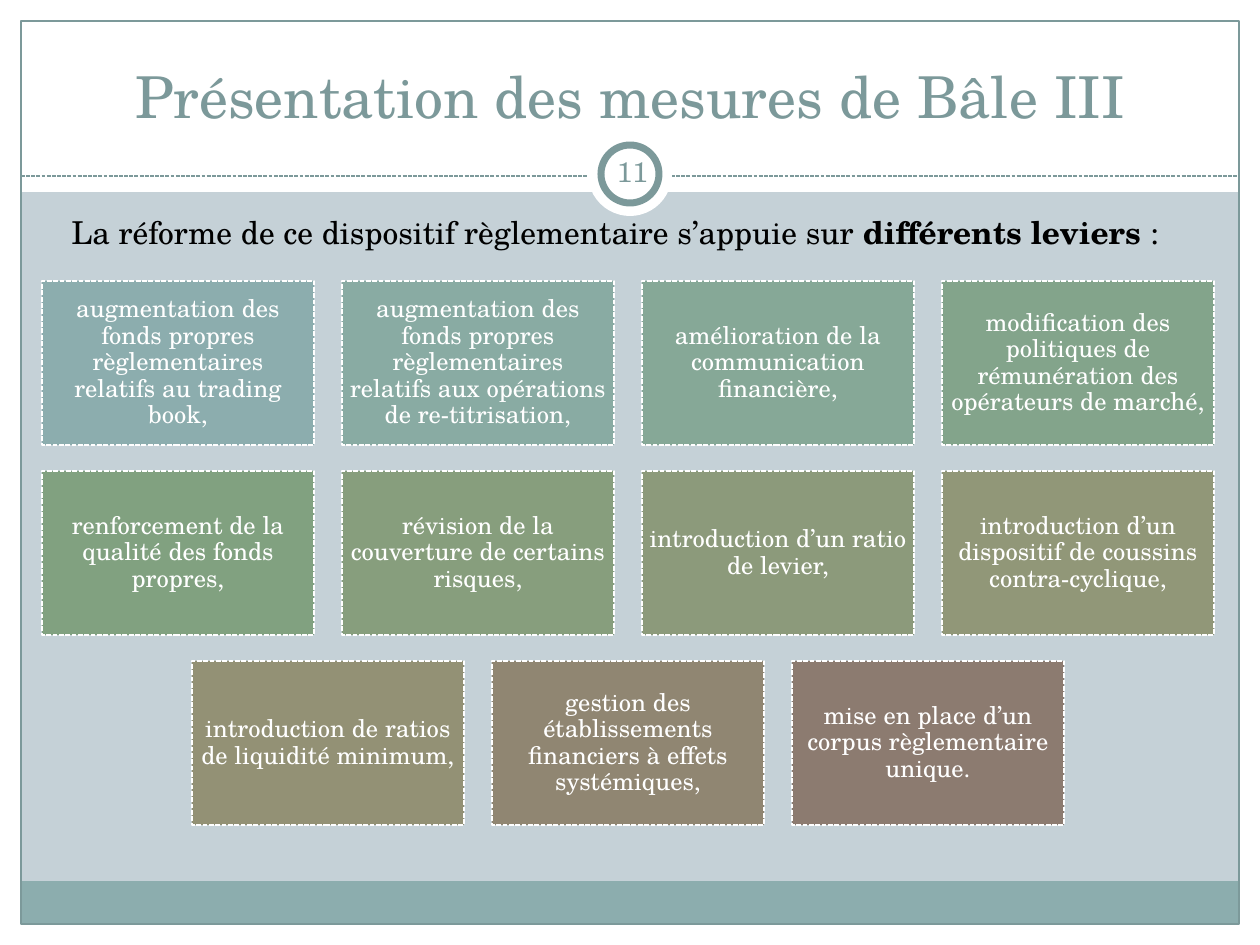
from pptx import Presentation
from pptx.dml.color import RGBColor
from pptx.enum.dml import MSO_LINE
from pptx.enum.shapes import MSO_CONNECTOR, MSO_SHAPE
from pptx.enum.text import MSO_ANCHOR, PP_ALIGN
from pptx.oxml.ns import qn
from pptx.util import Pt
from lxml import etree

RECT, OVAL = MSO_SHAPE.RECTANGLE, MSO_SHAPE.OVAL
STRAIGHT = MSO_CONNECTOR.STRAIGHT
DASH = MSO_LINE.SQUARE_DOT
LEFT, CENTER = PP_ALIGN.LEFT, PP_ALIGN.CENTER
TOP, MIDDLE, BOTTOM = MSO_ANCHOR.TOP, MSO_ANCHOR.MIDDLE, MSO_ANCHOR.BOTTOM

PX_PER_INCH = 126
EMU_PER_PX = 914400 / PX_PER_INCH
SLIDE_W, SLIDE_H = 1260, 945
FONT = "TeX Gyre Schola"
COLORS = {
    "background": "C5D1D7",
    "white": "FFFFFF",
    "black": "000000",
    "accent": "7C999A",
    "footer": "8CADAE",
}

CARD_W, CARD_H = 272, 164
COLUMN_STEP, ROW_STEP = 300, 190
GRID_LEFT, GRID_TOP, COLUMNS = 42, 281, 4
LEVERS = [
    ("augmentation des fonds propres règlementaires relatifs au trading book,", "8CADAE"),
    ("augmentation des fonds propres règlementaires relatifs aux opérations "
     "de re-titrisation,", "89ABA3"),
    ("amélioration de la communication financière,", "86A897"),
    ("modification des politiques de rémunération des opérateurs de marché,", "83A48B"),
    ("renforcement de la qualité des fonds propres,", "81A180"),
    ("révision de la couverture de certains risques,", "879E7D"),
    ("introduction d’un ratio de levier,", "8C9A7B"),
    ("introduction d’un dispositif de coussins contra-cyclique,", "919778"),
    ("introduction de ratios de liquidité minimum,", "939175"),
    ("gestion des établissements financiers à effets systémiques,", "908672"),
    ("mise en place d’un corpus règlementaire unique.", "8C7B70"),
]


def px(length):
    return round(length * EMU_PER_PX)


def rgb(color):
    return RGBColor.from_string(COLORS.get(color, color))


class SlideBuilder:
    """Holds the style and the slide being drawn."""

    def __init__(self, slide):
        self.slide = slide
        self.shapes = slide.shapes

    def background(self, color):
        fill = self.slide.background.fill
        fill.solid()
        fill.fore_color.rgb = rgb(color)

    def shape(self, kind, box, fill=None, line=None, width=0.75, dash=None):
        shape = self.shapes.add_shape(kind, *map(px, box))
        shape.shadow.inherit = False
        if fill:
            shape.fill.solid()
            shape.fill.fore_color.rgb = rgb(fill)
        else:
            shape.fill.background()
        if line:
            self.stroke(shape.line, line, width, dash)
        else:
            shape.line.fill.background()
        return shape

    def stroke(self, line, color, width, dash=None):
        line.color.rgb = rgb(color)
        line.width = Pt(width)
        if dash:
            line.dash_style = dash

    def dashed_rule(self, left, right, y):
        rule = self.shapes.add_connector(STRAIGHT, px(left), px(y), px(right), px(y))
        self.stroke(rule.line, "accent", 0.75, DASH)
        etree.SubElement(rule.element.spPr, qn("a:effectLst"))

    def set_text(self, frame, runs, size, color, align=CENTER, anchor=MIDDLE, inset=None):
        """Fill a text frame with one paragraph of (text, bold) runs."""
        frame.word_wrap = True
        frame.vertical_anchor = anchor
        if inset is not None:
            frame.margin_left = frame.margin_right = px(inset)
            frame.margin_top = frame.margin_bottom = px(inset)
        paragraph = frame.paragraphs[0]
        paragraph.alignment = align
        for text, bold in runs:
            run = paragraph.add_run()
            run.text = text
            run.font.name = FONT
            run.font.size = Pt(size)
            run.font.bold = bold
            run.font.color.rgb = rgb(color)
        return paragraph

    def title(self, text, box):
        title = self.shapes.title
        title.left, title.top, title.width, title.height = map(px, box)
        self.set_text(title.text_frame, [(text, False)], 33, "accent", anchor=BOTTOM)
        title.element.getparent().append(title.element)  # above the white bands

    def text(self, box, runs, size, color, **layout):
        textbox = self.shapes.add_textbox(*map(px, box))
        self.set_text(textbox.text_frame, runs, size, color, **layout)

    def card(self, box, text, fill):
        card = self.shape(RECT, box, fill, "white", 0.9, DASH)
        paragraph = self.set_text(card.text_frame, [(text, False)], 14, "white", inset=7)
        paragraph.line_spacing = 0.9


def draw_frame(builder):
    margin = 21
    builder.background("background")
    for band in (
        (0, SLIDE_H - margin, SLIDE_W, margin),
        (0, 0, SLIDE_W, 192),
        (0, 0, margin, SLIDE_H),
        (SLIDE_W - margin, 0, margin, SLIDE_H),
    ):
        builder.shape(RECT, band, "white")
    builder.shape(RECT, (margin, 881, SLIDE_W - 2 * margin, 43), "footer")
    builder.shape(RECT, (margin, margin, SLIDE_W - 2 * margin, SLIDE_H - 2 * margin),
                  line="accent")
    builder.dashed_rule(margin, SLIDE_W - margin, 176)
    builder.shape(OVAL, (588, 132, 84, 84), "white")
    builder.shape(OVAL, (601, 145, 58, 58), "white", "accent", 4)


def draw_levers(builder):
    for index, (text, fill) in enumerate(LEVERS):
        row, column = divmod(index, COLUMNS)
        in_row = min(COLUMNS, len(LEVERS) - row * COLUMNS)
        centring = (COLUMNS - in_row) * COLUMN_STEP // 2
        left = GRID_LEFT + centring + column * COLUMN_STEP
        builder.card((left, GRID_TOP + row * ROW_STEP, CARD_W, CARD_H), text, fill)


def main():
    deck = Presentation()
    deck.slide_width, deck.slide_height = px(SLIDE_W), px(SLIDE_H)
    title_only = deck.slide_layouts[5]
    builder = SlideBuilder(deck.slides.add_slide(title_only))

    draw_frame(builder)
    builder.title("Présentation des mesures de Bâle III", (42, 32, 1176, 104))
    builder.text((601, 141, 63, 61), [("11", False)], 16, "accent", inset=6)
    draw_levers(builder)
    builder.text(
        (59, 207, 1162, 50),
        [("La réforme de ce dispositif règlementaire s’appuie sur ", False),
         ("différents leviers ", True),
         (":", False)],
        18, "black", align=LEFT, anchor=TOP)
    deck.save("out.pptx")


if __name__ == "__main__":
    main()
